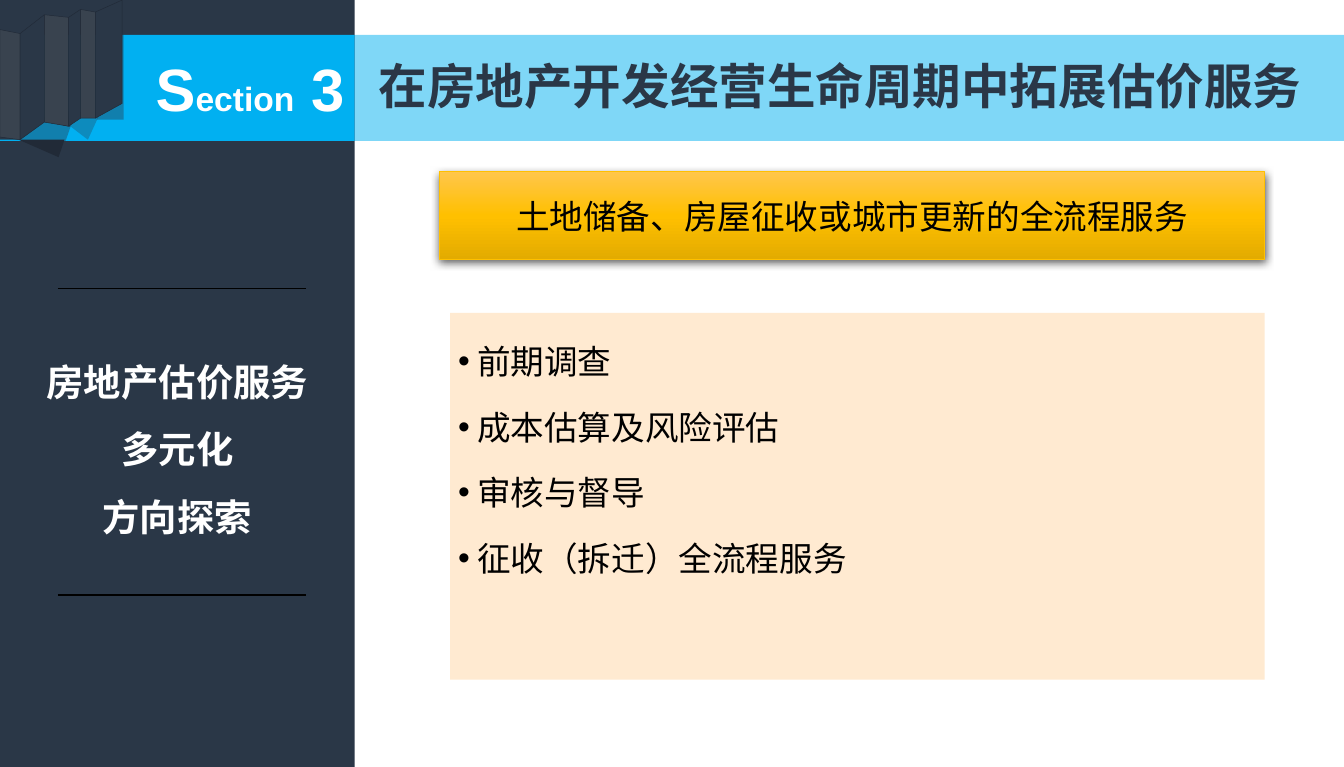
from lxml import etree
from pptx import Presentation
from pptx.dml.color import RGBColor
from pptx.enum import shapes, text
from pptx.oxml import ns, parse_xml
from pptx.util import Inches, Pt

NAVY = RGBColor(0x2A, 0x37, 0x47)
DARK = RGBColor(0x21, 0x2A, 0x37)
SLATE = RGBColor(0x39, 0x43, 0x4F)
SKY = RGBColor(0x01, 0xB0, 0xF1)
CREAM = RGBColor(0xFF, 0xE8, 0xCC)
AMBER = RGBColor(0xFF, 0xC0, 0x00)
AMBER_LIGHT = RGBColor(0xFF, 0xC6, 0x4B)
AMBER_DARK = RGBColor(0xE3, 0xAB, 0x00)
BLACK = RGBColor(0, 0, 0)
WHITE = RGBColor(0xFF, 0xFF, 0xFF)
HAN = "Noto Sans CJK SC"
LATIN = "Arial"
RECT = shapes.MSO_SHAPE.RECTANGLE
TRIANGLE = shapes.MSO_SHAPE.ISOSCELES_TRIANGLE


def paint(shape, color, alpha=100, edge=None, width=0.5):
    """Give a shape a flat fill, an optional outline and no shadow."""
    shape.shadow.inherit = False
    shape.fill.solid()
    shape.fill.fore_color.rgb = color
    if alpha < 100:
        tint = shape._element.spPr.find(ns.qn("a:solidFill"))[0]
        etree.SubElement(tint, ns.qn("a:alpha")).set("val", str(alpha * 1000))
    if edge is None:
        shape.line.fill.background()
    else:
        shape.line.color.rgb = edge
        shape.line.width = Pt(width)
    return shape


def add_block(slide, box, color, alpha=100, kind=RECT):
    """Add a painted preset shape in a box."""
    return paint(slide.shapes.add_shape(kind, *map(Inches, box)), color, alpha)


def add_rule(slide, start, end, color, width):
    """Add a straight line between two points."""
    rule = slide.shapes.add_connector(
        shapes.MSO_CONNECTOR.STRAIGHT, *map(Inches, start + end))
    rule.line.color.rgb = color
    rule.line.width = Pt(width)
    etree.SubElement(rule._element.spPr, ns.qn("a:effectLst"))


def add_run(paragraph, words, **formats):
    """Add a run and apply its font formats."""
    run = paragraph.add_run()
    run.text = words
    color = formats.pop("color")
    for name, value in formats.items():
        setattr(run.font, name, value)
    run.font.color.rgb = color
    east = etree.SubElement(run._r.get_or_add_rPr(), ns.qn("a:ea"))
    east.set("typeface", formats["name"])


def write(frame, lines, layout, **frame_formats):
    """Fill a text frame with paragraphs, each a list of (words, formats)."""
    for name, value in {"word_wrap": True, **frame_formats}.items():
        setattr(frame, name, value)
    for index, runs in enumerate(lines):
        paragraph = frame.paragraphs[0] if index == 0 else frame.add_paragraph()
        for name, value in layout.items():
            setattr(paragraph, name, value)
        for words, formats in runs:
            add_run(paragraph, words, **formats)


def add_label(slide, box, lines, **layout):
    """Add a text box."""
    write(slide.shapes.add_textbox(*map(Inches, box)).text_frame, lines, layout)


def add_folded_paper(slide):
    """Draw the folded paper strip and its shadows in the top left corner."""
    add_block(slide, (0.72, 0.1, 0.2, 0.79), NAVY, 40)
    add_block(slide, (0, 0.94, 0.15, 0.1), NAVY)
    add_rule(slide, (0.52, 0.94), (0.33, 0.9), NAVY, 0.5)
    for box, apex, color, alpha in (
            ((0.38, 0.83, 0.37, 0.21), 0.74, NAVY, 30),
            ((-0.02, 0.87, 0.57, 0.43), 0.74, NAVY, 40),
            ((0.14, 1.04, 0.34, 0.13), 0.87, DARK, 100)):
        shade = add_block(slide, box, color, alpha, TRIANGLE)
        shade.rotation = 180
        shade.adjustments[0] = 1 - apex
    creases = ((0, 22, 102), (15, 25, 104), (33, 11, 91), (51, 13, 94),
               (60, 7, 88), (71, 9, 88), (91, 0, 77))
    for index, (near, far) in enumerate(zip(creases, creases[1:])):
        fold = slide.shapes.build_freeform(near[0], near[1], scale=Inches(0.01))
        fold.add_line_segments(
            [(far[0], far[1]), (far[0], far[2]), (near[0], near[2])], close=True)
        paint(fold.convert_to_shape(), NAVY if index % 2 else SLATE,
              edge=DARK, width=0.25)


def add_sidebar(slide, left, top, width, height):
    """Place the dark sidebar with its topic between two rules."""
    topic = dict(size=Pt(20), name=HAN, bold=True, color=WHITE)
    for y in (2.15, 4.43):
        add_rule(slide, (left + 0.43, top + y), (left + 2.28, top + y), BLACK, 0.75)
    lines = [[(words, topic)] for words in ("房地产估价服务", "多元化", "方向探索")]
    add_label(slide, (left, top + 2.46, width, 1.56), lines,
              alignment=text.PP_ALIGN.CENTER, line_spacing=1.5)


def add_header(slide, left, top, width, height, split):
    """Place the header band with the section number and the title."""
    add_block(slide, (left, top, split, height), SKY)
    add_block(slide, (left + split, top, width - split, height), SKY, 50)
    add_folded_paper(slide)
    large = dict(size=Pt(32), name=LATIN, bold=True, color=WHITE)
    small = {**large, "size": Pt(18)}
    add_label(slide, (left + 1.06, top + 0.08, 2.6, 0.64),
              [[("S", large), ("ection", small), (" 3", large)]])
    title = dict(size=Pt(26), name=HAN, bold=True, color=NAVY)
    add_label(slide, (left + split + 0.08, top + 0.11, width - split - 0.08, 0.54),
              [[("在房地产开发经营生命周期中拓展估价服务", title)]])


def add_banner(slide, *box):
    """Place the amber banner with its gradient and soft shadow."""
    banner = add_block(slide, box, AMBER)
    banner.line.color.rgb = AMBER
    banner.line.width = Pt(0.5)
    stops = "".join(
        f'<a:gs pos="{pos * 1000}"><a:srgbClr val="{color}"/></a:gs>'
        for pos, color in ((0, AMBER_LIGHT), (50, AMBER), (100, AMBER_DARK)))
    properties = banner._element.spPr
    properties.replace(properties.find(ns.qn("a:solidFill")), parse_xml(
        f'<a:gradFill {ns.nsdecls("a")}><a:gsLst>{stops}</a:gsLst>'
        '<a:lin ang="5400000" scaled="0"/></a:gradFill>'))
    properties.find(ns.qn("a:effectLst")).append(parse_xml(
        f'<a:outerShdw {ns.nsdecls("a")} blurRad="{Pt(4.5)}" dist="{Pt(1.5)}" '
        'dir="5400000" rotWithShape="0"><a:srgbClr val="000000">'
        '<a:alpha val="63000"/></a:srgbClr></a:outerShdw>'))
    words = dict(size=Pt(18), name=HAN, color=BLACK)
    write(banner.text_frame, [[("土地储备、房屋征收或城市更新的全流程服务", words)]],
          dict(alignment=text.PP_ALIGN.CENTER),
          vertical_anchor=text.MSO_ANCHOR.MIDDLE,
          margin_left=Inches(0.08), margin_right=Inches(0.08),
          margin_top=Inches(0.04), margin_bottom=Inches(0.04))


def add_services(slide, *box):
    """Place the cream panel with the bulleted services."""
    panel = add_block(slide, box, CREAM, 90)
    words = dict(size=Pt(18), name=HAN, color=BLACK)
    services = ("前期调查", "成本估算及风险评估", "审核与督导", "征收（拆迁）全流程服务")
    write(panel.text_frame, [[(service, words)] for service in services],
          dict(alignment=text.PP_ALIGN.LEFT, line_spacing=1.5, space_after=Pt(2.7)),
          vertical_anchor=text.MSO_ANCHOR.TOP,
          margin_left=Inches(0.06), margin_right=Inches(0.09),
          margin_top=Inches(0.06), margin_bottom=Inches(0.1))
    for paragraph in panel.text_frame.paragraphs:
        properties = paragraph._p.get_or_add_pPr()
        properties.set("marL", str(Inches(0.14)))
        properties.set("indent", str(-Inches(0.14)))
        etree.SubElement(properties, ns.qn("a:buFont")).set("typeface", LATIN)
        etree.SubElement(properties, ns.qn("a:buChar")).set("char", "•")


def main():
    """Build the slide and save it."""
    deck = Presentation()
    deck.slide_width, deck.slide_height = Inches(10), Inches(5.71)
    slide = deck.slides.add_slide(deck.slide_layouts[6])
    sidebar = (0, 0, 2.64, 5.71)
    add_block(slide, sidebar, NAVY)
    add_header(slide, 0, 0.26, 10, 0.79, split=2.64)
    add_sidebar(slide, *sidebar)
    add_banner(slide, 3.27, 1.28, 6.14, 0.65)
    add_services(slide, 3.35, 2.33, 6.06, 2.73)
    deck.save("out.pptx")


if __name__ == "__main__":
    main()
